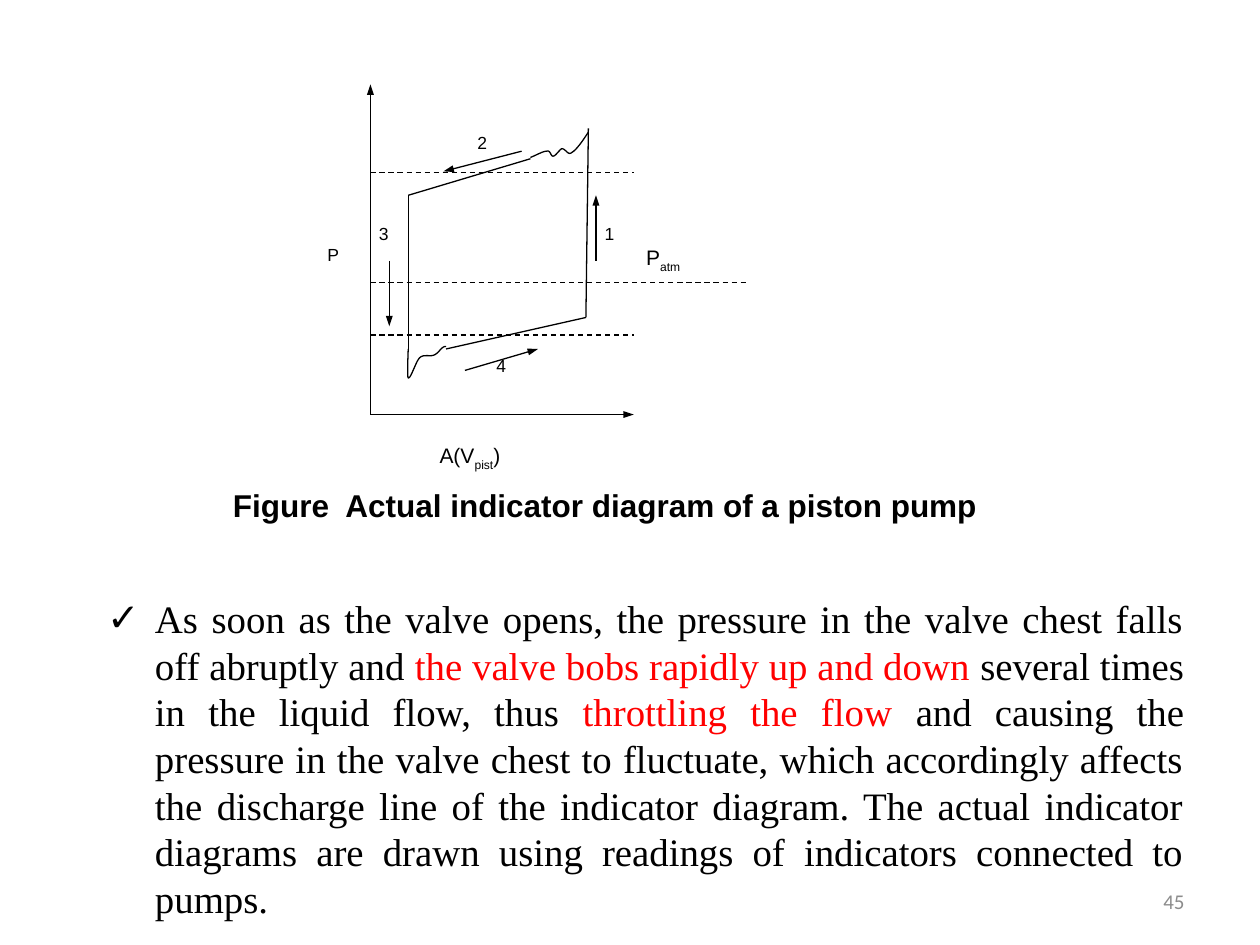
from lxml import etree
from pptx import Presentation
from pptx.dml.color import RGBColor
from pptx.enum import dml, shapes, text
from pptx.oxml.ns import qn
from pptx.util import Inches, Pt

HEX = {"ink": "000000", "red": "FF0000", "gray": "8C8C8C"}

deck = Presentation()
deck.slide_width, deck.slide_height = Inches(10), Inches(7.5)
slide = deck.slides.add_slide(deck.slide_layouts[1])
items = slide.shapes
title = items.title
title.element.getparent().remove(title.element)


def write(box, runs, size=10, font="Arial", bold=False, align=None, color="ink"):
    """Fill one paragraph; a run is (words, colour name or None, baseline)."""
    para = box.text_frame.paragraphs[0]
    para.alignment = align
    for words, tint, base in runs:
        run = para.add_run()
        run.text = words
        run.font.size, run.font.name, run.font.bold = Pt(size), font, bold
        run.font.color.rgb = RGBColor.from_string(HEX[tint or color])
        if base:
            run.font._element.set("baseline", str(base))
    return para


def style(mark, dash=False, head=None):
    """Thin black line; head is headEnd or tailEnd."""
    mark.line.color.rgb = RGBColor.from_string(HEX["ink"])
    mark.line.width = Pt(0.75)
    if dash:
        mark.line.dash_style = dml.MSO_LINE.DASH
    if head:
        etree.SubElement(mark.line._get_or_add_ln(), qn("a:" + head),
                         type="triangle", w="sm", len="med")


# Body text with check bullet
body = slide.placeholders[1]
body.left, body.top = Inches(0.75), Inches(4.67)
body.width, body.height = Inches(8.75), Inches(2.58)
body.text_frame.auto_size = text.MSO_AUTO_SIZE.NONE
para = write(body, [
    ("As soon as the valve opens, the pressure in the valve chest falls off "
     "abruptly and ", None, 0),
    ("the valve bobs rapidly up and down", "red", 0),
    (" several times in the liquid flow, thus ", None, 0),
    ("throttling the flow ", "red", 0),
    ("and causing the pressure in the valve chest to fluctuate, which accordingly "
     "affects the discharge line of the indicator diagram. The actual indicator "
     "diagrams are drawn using readings of indicators connected to pumps.", None, 0),
], size=22.2, font="Times New Roman", align=text.PP_ALIGN.JUSTIFY)
props = para._p.get_or_add_pPr()
props.set("marL", str(Inches(0.38)))
props.set("indent", str(-Inches(0.38)))
etree.SubElement(props, qn("a:buFont"), typeface="Arial")
etree.SubElement(props, qn("a:buChar"), char="✓")

# Axes, pressure levels, cycle sides and direction arrows
LEFT, RIGHT, BASE = 2.94, 5.03, 3.29
lines = [
    (LEFT, BASE, LEFT, 0.67, False, "tailEnd"),
    (LEFT, BASE, RIGHT, BASE, False, "tailEnd"),
    (LEFT, 1.37, RIGHT, 1.37, True, None),
    (LEFT, 2.24, 5.93, 2.24, True, None),
    (LEFT, 2.66, RIGHT, 2.66, True, None),
    (3.24, 1.55, 3.24, 2.77, False, None),
    (3.54, 2.77, 4.65, 2.52, False, None),
    (4.65, 2.52, 4.67, 1.02, False, None),
    (4.21, 1.26, 3.24, 1.55, False, None),
    (4.73, 2.07, 4.73, 1.55, False, "tailEnd"),
    (4.14, 1.2, 3.52, 1.36, False, "tailEnd"),
    (3.09, 2.07, 3.09, 2.59, False, "tailEnd"),
    (3.69, 2.94, 4.27, 2.77, False, "tailEnd"),
]
for x1, y1, x2, y2, dash, head in lines:
    line = items.add_connector(shapes.MSO_CONNECTOR.STRAIGHT,
                               Inches(x1), Inches(y1), Inches(x2), Inches(y2))
    style(line, dash, head)
    etree.SubElement(line._element.spPr, qn("a:effectLst"))

# Valve flutter: chains of cubic curves, three points per curve after the start
waves = [
    [(4.67, 1.05), (4.65, 1.08), (4.58, 1.19), (4.54, 1.21),
     (4.51, 1.24), (4.49, 1.18), (4.46, 1.18), (4.44, 1.19), (4.41, 1.24), (4.39, 1.24),
     (4.37, 1.24), (4.37, 1.19), (4.34, 1.2), (4.31, 1.2), (4.24, 1.24), (4.21, 1.25)],
    [(3.24, 2.77), (3.24, 2.8), (3.23, 2.99), (3.24, 3),
     (3.26, 3.01), (3.3, 2.87), (3.33, 2.84), (3.36, 2.81), (3.41, 2.83), (3.44, 2.82),
     (3.47, 2.81), (3.49, 2.78), (3.5, 2.77), (3.52, 2.75), (3.53, 2.75), (3.54, 2.75)],
]
STEPS = 10
for wave in waves:
    dots = [tuple(Inches(v) for v in wave[0])]
    for i in range(0, len(wave) - 1, 3):
        for step in range(1, STEPS + 1):
            t = step / STEPS
            parts = ((1 - t) ** 3, 3 * t * (1 - t) ** 2, 3 * t * t * (1 - t), t ** 3)
            dots.append(tuple(Inches(sum(w * p[axis] for w, p in zip(parts, wave[i:i + 4])))
                              for axis in (0, 1)))
    pen = items.build_freeform(*dots[0])
    pen.add_line_segments(dots[1:], close=False)
    curve = pen.convert_to_shape()
    curve.fill.background()
    curve.shadow.inherit = False
    style(curve)

# Labels, caption and page number
labels = [
    (5.03, 1.89, 1.64, 0.52, [("P", None, 0), ("atm", None, -30000)], {"size": 12}),
    (4.7, 1.72, 0.48, 0.35, [("1", None, 0)], {}),
    (3.69, 1, 0.6, 0.35, [("2", None, 0)], {}),
    (2.91, 1.72, 0.33, 0.35, [("3", None, 0)], {}),
    (3.84, 2.77, 0.45, 0.35, [("4", None, 0)], {}),
    (2.5, 1.89, 0.45, 0.35, [("P", None, 0)], {}),
    (3.39, 3.46, 1.64, 0.52,
     [("A(V", None, 0), ("pist", None, -30000), (")", None, 0)], {"size": 12}),
    (1.75, 3.81, 7.25, 0.52,
     [("Figure  Actual indicator diagram of a piston pump", None, 0)],
     {"size": 18, "bold": True}),
    (7.17, 6.95, 2.33, 0.4, [("45", None, 0)],
     {"size": 12, "font": "Calibri", "color": "gray", "align": text.PP_ALIGN.RIGHT}),
]
for x, y, w, h, runs, form in labels:
    box = items.add_textbox(Inches(x), Inches(y), Inches(w), Inches(h))
    box.text_frame.word_wrap = True
    write(box, runs, **form)
box.text_frame.vertical_anchor = text.MSO_ANCHOR.MIDDLE

deck.save("out.pptx")
